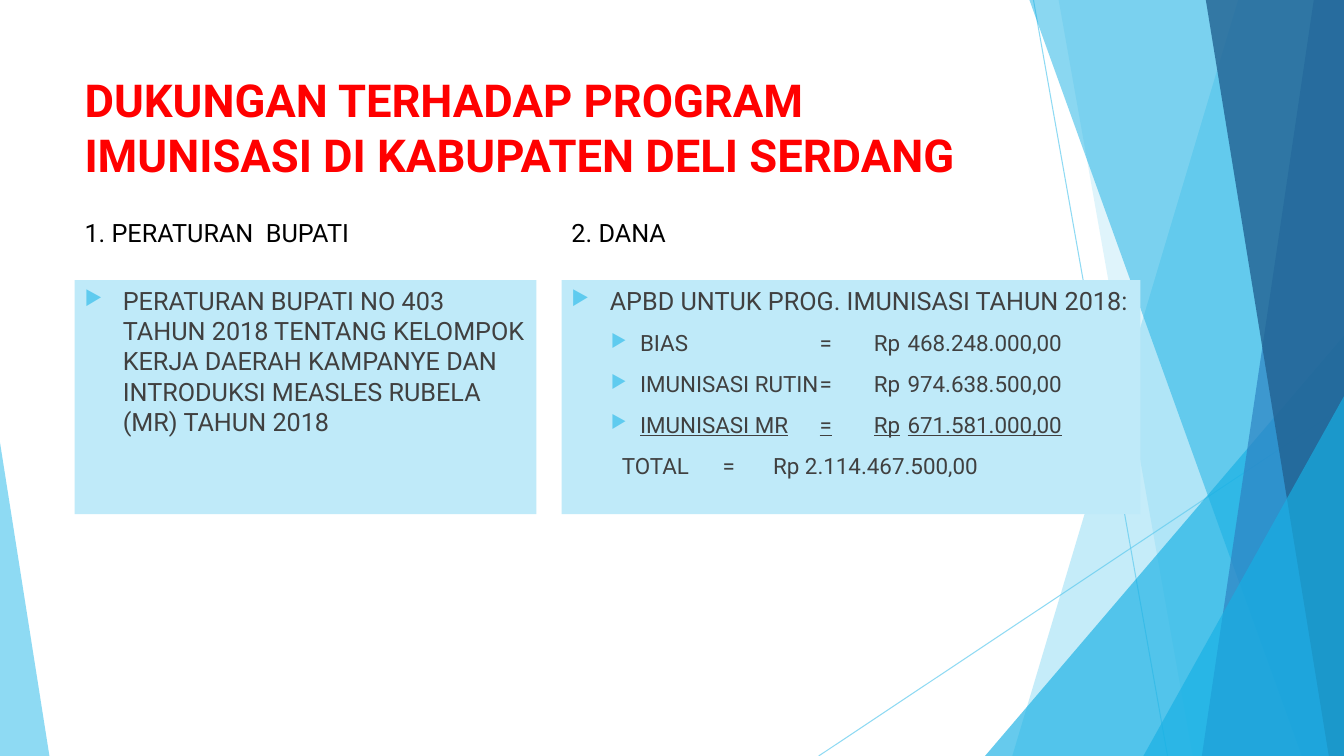
from dataclasses import dataclass

from pptx import Presentation
from pptx.dml.color import RGBColor
from pptx.enum.shapes import MSO_CONNECTOR as Connector, MSO_SHAPE as Shape
from pptx.enum.text import MSO_ANCHOR as Anchor, PP_ALIGN as Align
from pptx.oxml.ns import qn
from pptx.oxml.xmlchemy import OxmlElement
from pptx.util import Inches, Pt


@dataclass(frozen=True)
class Theme:
    font: str = "Roboto"
    sky: str = "5FCBEF"
    cyan: str = "17B0E4"
    blue: str = "2E83C3"
    navy: str = "226292"
    panel: str = "BFEAF9"
    title: str = "FF0000"
    heading: str = "000000"
    body: str = "404040"
    title_size: float = 32.4
    body_size: float = 18
    item_size: float = 16


THEME = Theme()
WIDTH, HEIGHT = 13.33, 7.5


def add_xml(parent, tag, **attributes):
    child = OxmlElement(tag)
    for name, value in attributes.items():
        child.set(name, str(value))
    parent.append(child)
    return child


def set_opacity(color_format, color, opacity):
    """Colour a solid fill or line and give it an opacity in percent."""
    color_format.fore_color.rgb = RGBColor.from_string(color)
    if opacity < 100:
        solid = color_format._xPr.find(qn("a:solidFill"))
        add_xml(solid[0], "a:alpha", val=opacity * 1000)


def paint(shape, color, opacity=100):
    shape.shadow.inherit = False
    shape.fill.solid()
    set_opacity(shape.fill, color, opacity)
    shape.line.fill.background()


def add_ray(page, start, end):
    ray = page.shapes.add_connector(
        Connector.STRAIGHT, *(Inches(value) for value in start + end))
    ray.line.width = Pt(0.75)
    ray.line.fill.solid()
    ray.line.color.rgb = RGBColor.from_string(THEME.sky)
    color = ray.line._ln.find(qn("a:solidFill"))[0]
    add_xml(color, "a:alpha", val=70000)
    add_xml(ray._element.spPr, "a:effectLst")


def add_band(page, top_x, bottom_x, color, opacity):
    """Fill the slide from a slanted left edge to its right side."""
    outline = page.shapes.build_freeform(Inches(top_x), 0)
    corners = [(WIDTH, 0), (WIDTH, HEIGHT), (bottom_x, HEIGHT)]
    outline.add_line_segments([(Inches(x), Inches(y)) for x, y in corners])
    paint(outline.convert_to_shape(), color, opacity)


def add_corner(page, left, top, width, apex, color, opacity):
    """Stand a triangle on the bottom edge, its apex at 0 (left) or 1 (right)."""
    corner = page.shapes.add_shape(
        Shape.ISOSCELES_TRIANGLE, Inches(left), Inches(top),
        Inches(width), Inches(HEIGHT - top))
    corner.adjustments[0] = apex
    paint(corner, color, opacity)


def add_backdrop(page):
    add_ray(page, (10.25, 0), (11.58, HEIGHT))
    add_ray(page, (WIDTH, 4.03), (8.12, HEIGHT))
    add_band(page, 12.28, 10.04, THEME.sky, 36)
    add_band(page, 10.5, 11.83, THEME.sky, 20)
    add_corner(page, 9.77, 3.33, 3.56, 1, THEME.cyan, 66)
    add_band(page, 10.21, 12.91, THEME.cyan, 50)
    add_band(page, 13.03, 11.92, THEME.blue, 70)
    add_band(page, 11.96, 13.18, THEME.navy, 80)
    add_corner(page, 11.34, 3.93, 1.99, 1, THEME.cyan, 66)
    add_corner(page, 0, 4.39, 0.49, 0, THEME.sky, 70)


def write(frame, text, size=THEME.body_size, color=THEME.body, bold=False,
          underline=False, level=0, left=0, hanging=0, before=0,
          bullet=False, tabs=()):
    """Add a paragraph; tabs are (position in inches, "l" or "r") pairs."""
    frame.word_wrap = True
    frame.vertical_anchor = Anchor.TOP
    para = frame.paragraphs[0]
    if para.runs:
        para = frame.add_paragraph()
    para.alignment = Align.LEFT
    para.level = level
    para.space_before = Pt(before)
    properties = para._p.get_or_add_pPr()
    properties.set("marL", str(Inches(left)))
    properties.set("indent", str(Inches(-hanging)))
    if bullet:
        add_xml(add_xml(properties, "a:buClr"), "a:srgbClr", val=THEME.sky)
        add_xml(properties, "a:buSzPct", val=80000)
        add_xml(properties, "a:buChar", char="▶")
    if tabs:
        tab_list = add_xml(properties, "a:tabLst")
        for position, side in tabs:
            add_xml(tab_list, "a:tab", pos=Inches(position), algn=side)
    span = para.add_run()
    span.text = text
    span.font.name = THEME.font
    span.font.size = Pt(size)
    span.font.bold = bold
    span.font.underline = underline
    span.font.color.rgb = RGBColor.from_string(color)


def add_text(page, left, top, width, height, text, **style):
    box = page.shapes.add_textbox(
        Inches(left), Inches(top), Inches(width), Inches(height))
    write(box.text_frame, text, **style)


def add_column(page, left, top, width, heading, lead):
    """Place a heading above a tinted panel and return the panel's text."""
    add_text(page, left, top, width, 0.4, heading, color=THEME.heading)
    panel = page.shapes.add_shape(
        Shape.RECTANGLE, Inches(left), Inches(top + 0.67),
        Inches(width), Inches(2.32))
    paint(panel, THEME.panel)
    write(panel.text_frame, lead, left=0.38, hanging=0.38, before=10, bullet=True)
    return panel.text_frame


def add_budget(frame):
    items = [("BIAS", "468.248.000,00"),
             ("IMUNISASI RUTIN", "974.638.500,00"),
             ("IMUNISASI MR", "671.581.000,00")]
    for name, amount in items:
        write(frame, f"{name}\t=\tRp\t{amount}", size=THEME.item_size,
              underline=name == items[-1][0], level=1, left=0.68, hanging=0.29,
              before=10, bullet=True, tabs=[(2.46, "l"), (3, "l"), (5, "r")])
    write(frame, "\tTOTAL\t=\tRp 2.114.467.500,00", size=THEME.item_size, level=1,
          before=10, tabs=[(0.61, "l"), (1.89, "l"), (2.39, "l")])


def main():
    deck = Presentation()
    deck.slide_width, deck.slide_height = Inches(WIDTH), Inches(HEIGHT)
    page = deck.slides.add_slide(deck.slide_layouts[6])
    add_backdrop(page)
    add_text(page, 0.74, 0.67, 9.4, 1.44,
             "DUKUNGAN TERHADAP PROGRAM IMUNISASI DI KABUPATEN DELI SERDANG",
             size=THEME.title_size, color=THEME.title, bold=True)
    add_column(page, 0.74, 2.11, 4.58, "1. PERATURAN  BUPATI",
               "PERATURAN BUPATI NO 403 TAHUN 2018 TENTANG KELOMPOK KERJA DAERAH "
               "KAMPANYE DAN INTRODUKSI MEASLES RUBELA (MR) TAHUN 2018")
    budget = add_column(page, 5.57, 2.11, 5.74, "2. DANA",
                        "APBD UNTUK PROG. IMUNISASI TAHUN 2018:")
    add_budget(budget)
    deck.save("out.pptx")


if __name__ == "__main__":
    main()
